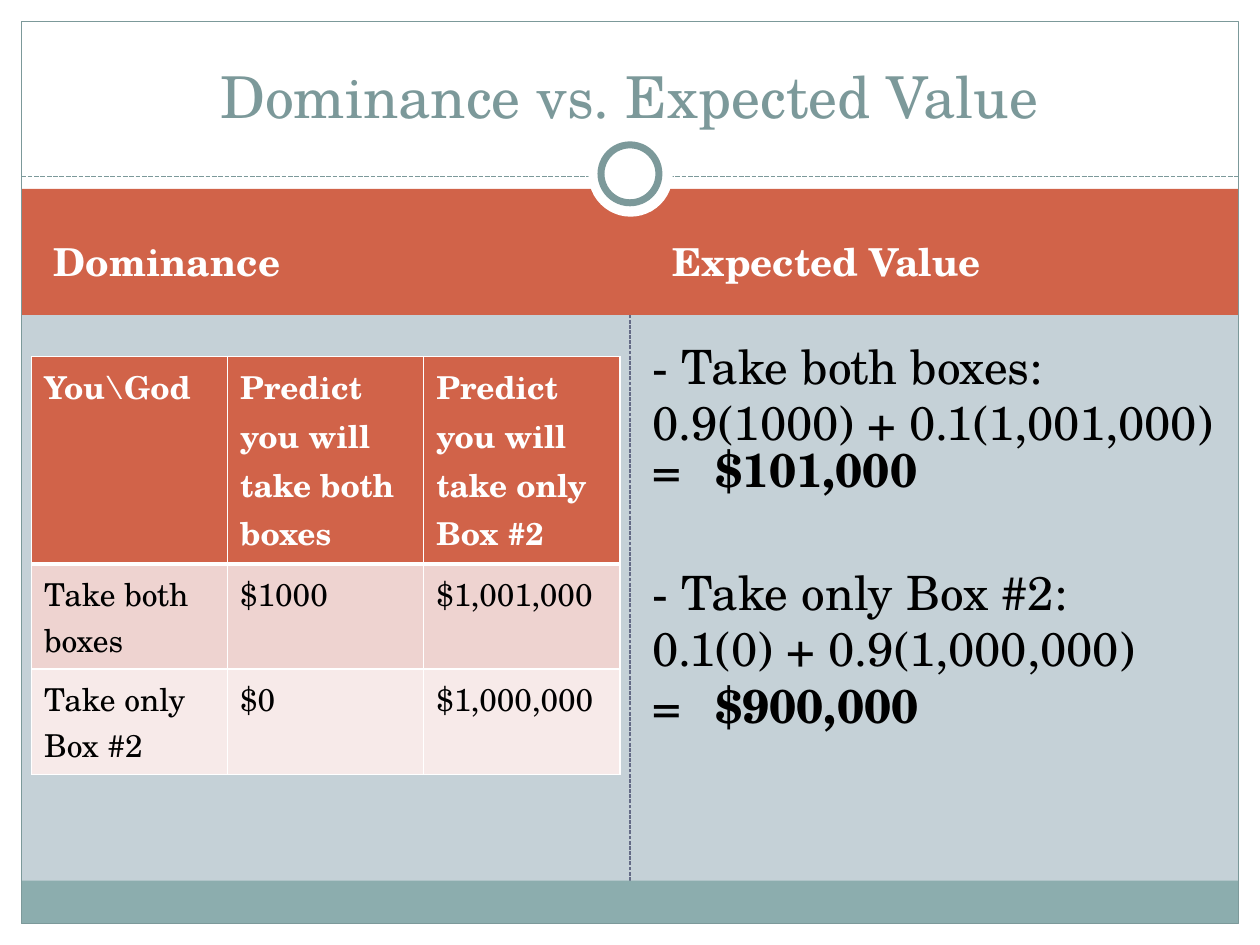
from typing import NamedTuple, Optional

from lxml.etree import SubElement
from pptx import Presentation
from pptx.dml.color import RGBColor
from pptx.enum.dml import MSO_LINE
from pptx.enum.shapes import MSO_CONNECTOR, MSO_SHAPE
from pptx.enum.text import MSO_ANCHOR, PP_ALIGN
from pptx.oxml.ns import qn
from pptx.util import Inches, Pt

FONT = "TeX Gyre Schola"
WHITE = RGBColor(0xFF, 0xFF, 0xFF)
BLACK = RGBColor(0x00, 0x00, 0x00)
BACKGROUND = RGBColor(0xC5, 0xD1, 0xD7)
RUST = RGBColor(0xD1, 0x63, 0x49)
TEAL = RGBColor(0x7C, 0x99, 0x9A)
FOOTER_TEAL = RGBColor(0x8C, 0xAD, 0xAE)
SLATE = RGBColor(0x64, 0x6B, 0x86)
PINK = RGBColor(0xEE, 0xD3, 0xD0)
PALE_PINK = RGBColor(0xF7, 0xEA, 0xE9)

WIDTH, HEIGHT, EDGE = 10, 7.5, 0.17
INNER = WIDTH - 2 * EDGE


class Box(NamedTuple):
    left: float
    top: float
    width: float
    height: float

    def lengths(self) -> list:
        return [Inches(v) for v in self]


class Panel(NamedTuple):
    box: Box
    fill: Optional[RGBColor] = None
    line: Optional[RGBColor] = None
    weight: float = 0
    shape: MSO_SHAPE = MSO_SHAPE.RECTANGLE


class Run(NamedTuple):
    text: str
    bold: bool = False


class Para(NamedTuple):
    runs: list
    before: float = 0
    spacing: Optional[float] = None


class TextBlock(NamedTuple):
    box: Box
    paras: list
    size: float
    color: RGBColor
    anchor: MSO_ANCHOR = MSO_ANCHOR.TOP
    align: PP_ALIGN = PP_ALIGN.LEFT


class TableRow(NamedTuple):
    height: float
    texts: list
    fill: RGBColor
    color: RGBColor = BLACK
    bold: bool = False
    top: float = 1
    bottom: float = 1


FOOTER = Panel(Box(EDGE, 6.99, INNER, 0.34), FOOTER_TEAL)
BACK_PANELS = [
    Panel(Box(0, 0, WIDTH, 1.58), WHITE),
    Panel(Box(0, HEIGHT - EDGE, WIDTH, EDGE), WHITE),
    Panel(Box(0, 0, EDGE, HEIGHT), WHITE),
    Panel(Box(WIDTH - EDGE, 0, EDGE, HEIGHT), WHITE),
    Panel(Box(EDGE, 1.5, INNER, 1), RUST),
]
FRONT_PANELS = [
    Panel(Box(EDGE, EDGE, INNER, HEIGHT - 2 * EDGE), None, TEAL, 0.75),
    Panel(Box(4.67, 1.05, 0.67, 0.67), WHITE, shape=MSO_SHAPE.OVAL),
    Panel(Box(4.77, 1.15, 0.46, 0.46), WHITE, TEAL, 4, MSO_SHAPE.OVAL),
]

LEADING, GAP, SECTION_GAP = 0.83, 5.4, 43
TEXTS = [
    TextBlock(Box(left, 1.67, 4.42, 0.8), [Para([Run(label, True)], 4.4)],
              22, WHITE, MSO_ANCHOR.MIDDLE)
    for left, label in [(0.33, "Dominance"), (5.24, "Expected Value")]
] + [
    TextBlock(Box(5.08, 2.7, 4.83, 4.18), [
        Para([Run("- Take both boxes:")], GAP, LEADING),
        Para([Run("0.9(1000) + 0.1(1,001,000) ="), Run("\t$101,000", True)], GAP, LEADING),
        Para([Run("- Take only Box #2:")], SECTION_GAP, LEADING),
        Para([Run("0.1(0) + 0.9(1,000,000)")], GAP, LEADING),
        Para([Run("=\t"), Run("$900,000", True)], GAP, LEADING),
    ], 27, BLACK),
    TextBlock(Box(0.33, 0.25, 9.33, 0.83), [Para([Run("Dominance vs. Expected Value")])],
              33, TEAL, MSO_ANCHOR.BOTTOM, PP_ALIGN.CENTER),
]

TABLE_BOX = Box(0.25, 2.83, 4.67, 2.56)
PAYOFFS = [
    TableRow(1.08, ["You\\God", "Predict you will take both boxes",
                    "Predict you will take only Box #2"], RUST, WHITE, True, bottom=3),
    TableRow(0.75, ["Take both boxes", "$1000", "$1,001,000"], PINK, top=3),
    TableRow(0.73, ["Take only Box #2", "$0", "$1,000,000"], PALE_PINK),
]


def add_panel(s, panel: Panel):
    sp = s.shapes.add_shape(panel.shape, *panel.box.lengths())
    sp.shadow.inherit = False
    if panel.fill is None:
        sp.fill.background()
    else:
        sp.fill.solid()
        sp.fill.fore_color.rgb = panel.fill
    if panel.line is None:
        sp.line.fill.background()
    else:
        sp.line.color.rgb = panel.line
        sp.line.width = Pt(panel.weight)
    return sp


def add_dashed_line(s, x1: float, y1: float, x2: float, y2: float,
                    color: RGBColor, weight: float):
    line = s.shapes.add_connector(MSO_CONNECTOR.STRAIGHT,
                                  *[Inches(v) for v in (x1, y1, x2, y2)])
    line.line.color.rgb = color
    line.line.width = Pt(weight)
    line.line.dash_style = MSO_LINE.SQUARE_DOT
    SubElement(line._element.spPr, qn("a:effectLst"))
    return line


def add_run(p, run: Run, size: float, color: RGBColor) -> None:
    r = p.add_run()
    r.text = run.text
    r.font.name = FONT
    r.font.size = Pt(size)
    r.font.bold = run.bold
    r.font.color.rgb = color


def add_text(s, block: TextBlock) -> None:
    tf = s.shapes.add_textbox(*block.box.lengths()).text_frame
    tf.word_wrap = True
    tf.vertical_anchor = block.anchor
    for i, para in enumerate(block.paras):
        p = tf.add_paragraph() if i else tf.paragraphs[0]
        p.alignment = block.align
        p.space_before = Pt(para.before)
        if para.spacing:
            p.line_spacing = para.spacing
        for run in para.runs:
            add_run(p, run, block.size, block.color)


def set_border(cell, side: str, weight: float) -> None:
    ln = SubElement(cell._tc.get_or_add_tcPr(), qn(f"a:ln{side}"), w=str(Pt(weight)))
    SubElement(SubElement(ln, qn("a:solidFill")), qn("a:srgbClr"), val=str(WHITE))


def add_payoff_table(s, box: Box, rows: list) -> None:
    columns = len(rows[0].texts)
    table = s.shapes.add_table(len(rows), columns, *box.lengths()).table
    for column in table.columns:
        column.width = Inches(box.width / columns)
    for i, row in enumerate(rows):
        table.rows[i].height = Inches(row.height)
        for j, text in enumerate(row.texts):
            cell = table.cell(i, j)
            for side, weight in zip("LRTB", (1, 1, row.top, row.bottom)):
                set_border(cell, side, weight)
            cell.fill.solid()
            cell.fill.fore_color.rgb = row.fill
            add_run(cell.text_frame.paragraphs[0], Run(text, row.bold), 18, row.color)


def main() -> None:
    prs = Presentation()
    prs.slide_width, prs.slide_height = Inches(WIDTH), Inches(HEIGHT)
    s = prs.slides.add_slide(prs.slide_layouts[6])
    s.background.fill.solid()
    s.background.fill.fore_color.rgb = BACKGROUND

    divider = add_dashed_line(s, 5, FOOTER.box.top, 5, 2.41, SLATE, 0.75)
    for panel in BACK_PANELS:
        add_panel(s, panel)
    divider.begin_connect(add_panel(s, FOOTER), 0)
    add_dashed_line(s, EDGE, 1.4, WIDTH - EDGE, 1.4, TEAL, 0.9)
    for panel in FRONT_PANELS:
        add_panel(s, panel)
    add_payoff_table(s, TABLE_BOX, PAYOFFS)
    for block in TEXTS:
        add_text(s, block)
    prs.save("out.pptx")


if __name__ == "__main__":
    main()
